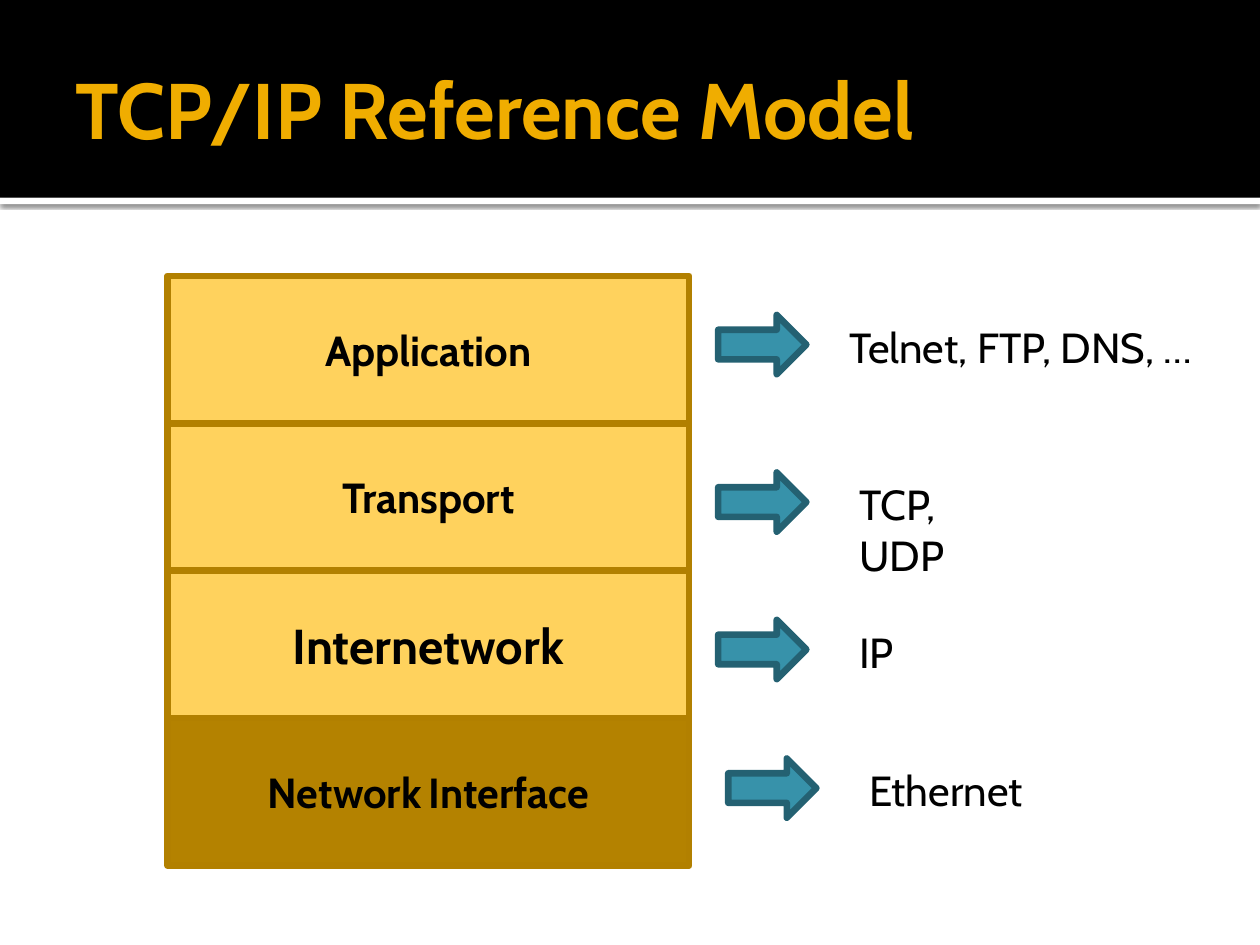
from lxml import etree
from pptx import Presentation
from pptx.dml.color import RGBColor
from pptx.enum import shapes, text
from pptx.oxml import parse_xml
from pptx.oxml.ns import nsdecls, qn
from pptx.util import Inches, Pt

COLUMN = ROW = Inches(0.1)
FONT = "Cabin"
BLACK, WHITE, AMBER = "000000", "FFFFFF", "F0AD00"
YELLOW, BROWN, BORDER = "FFD25D", "B48200", "B28000"
TEAL, DARK_TEAL = "3792AA", "246172"


def color(value):
    return RGBColor.from_string(value)


class SlideBuilder:
    def __init__(self, page):
        self.page = page

    def place(self, left, top, width, height):
        return [round(n * unit) for n, unit in
                zip((left, top, width, height), (COLUMN, ROW, COLUMN, ROW))]

    def shape(self, kind, area, fill, line=None):
        shape = self.page.shapes.add_shape(kind, *self.place(*area))
        shape.shadow.inherit = False
        shape.fill.solid()
        shape.fill.fore_color.rgb = color(fill)
        if line is None:
            shape.line.fill.background()
        else:
            shape.line.color.rgb = color(line)
            shape.line.width = Pt(3.78)
            etree.SubElement(shape.line._get_or_add_ln(), qn("a:round"))
        return shape

    def bar(self, area, fill, line=None):
        return self.shape(shapes.MSO_SHAPE.RECTANGLE, area, fill, line)

    def arrow(self, area):
        return self.shape(shapes.MSO_SHAPE.RIGHT_ARROW, area, TEAL, DARK_TEAL)

    def drop_shadow(self, shape):
        effects = shape._element.spPr.find(qn("a:effectLst"))
        effects.append(parse_xml(
            f'<a:outerShdw {nsdecls("a")} blurRad="{Pt(2.5)}" dist="{Pt(0.8)}" '
            'dir="5400000" algn="tl" rotWithShape="0">'
            f'<a:srgbClr val="{BLACK}"><a:alpha val="60000"/></a:srgbClr>'
            '</a:outerShdw>'))

    def style(self, span, size, bold=False, ink=BLACK):
        span.font.name = FONT
        span.font.size = Pt(size)
        span.font.bold = bold
        span.font.color.rgb = color(ink)

    def layer(self, area, fill, words):
        box = self.bar(area, fill, BORDER)
        box.text_frame.vertical_anchor = text.MSO_ANCHOR.MIDDLE
        para = box.text_frame.paragraphs[0]
        para.alignment = text.PP_ALIGN.CENTER
        for word, size in words:
            span = para.add_run()
            span.text = word
            self.style(span, size, bold=True)

    def label(self, area, words, size=24, wrap=False, bold=False, ink=BLACK):
        box = self.page.shapes.add_textbox(*self.place(*area))
        box.text_frame.word_wrap = wrap
        box.text_frame.text = words
        self.style(box.text_frame.paragraphs[0].runs[0], size, bold, ink)
        return box

    def title(self, area, words):
        frame = self.label(area, words, 45, True, True, AMBER).text_frame
        frame.vertical_anchor = text.MSO_ANCHOR.MIDDLE
        frame.margin_right = Inches(0.05)


def main():
    deck = Presentation()
    deck.slide_width, deck.slide_height = 100 * COLUMN, 75 * ROW
    slide = SlideBuilder(deck.slides.add_slide(deck.slide_layouts[6]))

    slide.drop_shadow(slide.bar((0, 15.7, 100, 0.5), WHITE))
    slide.bar((0, 0, 100, 15.7), BLACK)
    slide.title((5, 1.7, 90, 13.7), "TCP/IP Reference Model")

    layers = [
        ([("Application", 24)], YELLOW),
        ([("Transport", 24)], YELLOW),
        ([("Internetwork", 28)], YELLOW),
        ([("Network", 24), (" ", 18), ("Interface", 24)], BROWN),
    ]
    height = 11.7
    for index, (words, fill) in reversed(list(enumerate(layers))):
        slide.layer((13.3, 21.9 + index * height, 41.4, height), fill, words)

    protocols = [
        ("Telnet, FTP, DNS, …", 57, 66.4, 25, 29.7, False),
        ("TCP, UDP", 57, 67.2, 37.5, 15.2, True),
        ("IP", 57, 67.2, 49.2, 4.8, False),
        ("Ethernet", 57.8, 68, 60.2, 14.3, False),
    ]
    for words, arrow_left, label_left, top, width, wrap in protocols:
        slide.arrow((arrow_left, top, 7, 4.7))
        slide.label((label_left, top, width, 5), words, wrap=wrap)

    deck.save("out.pptx")


if __name__ == "__main__":
    main()
